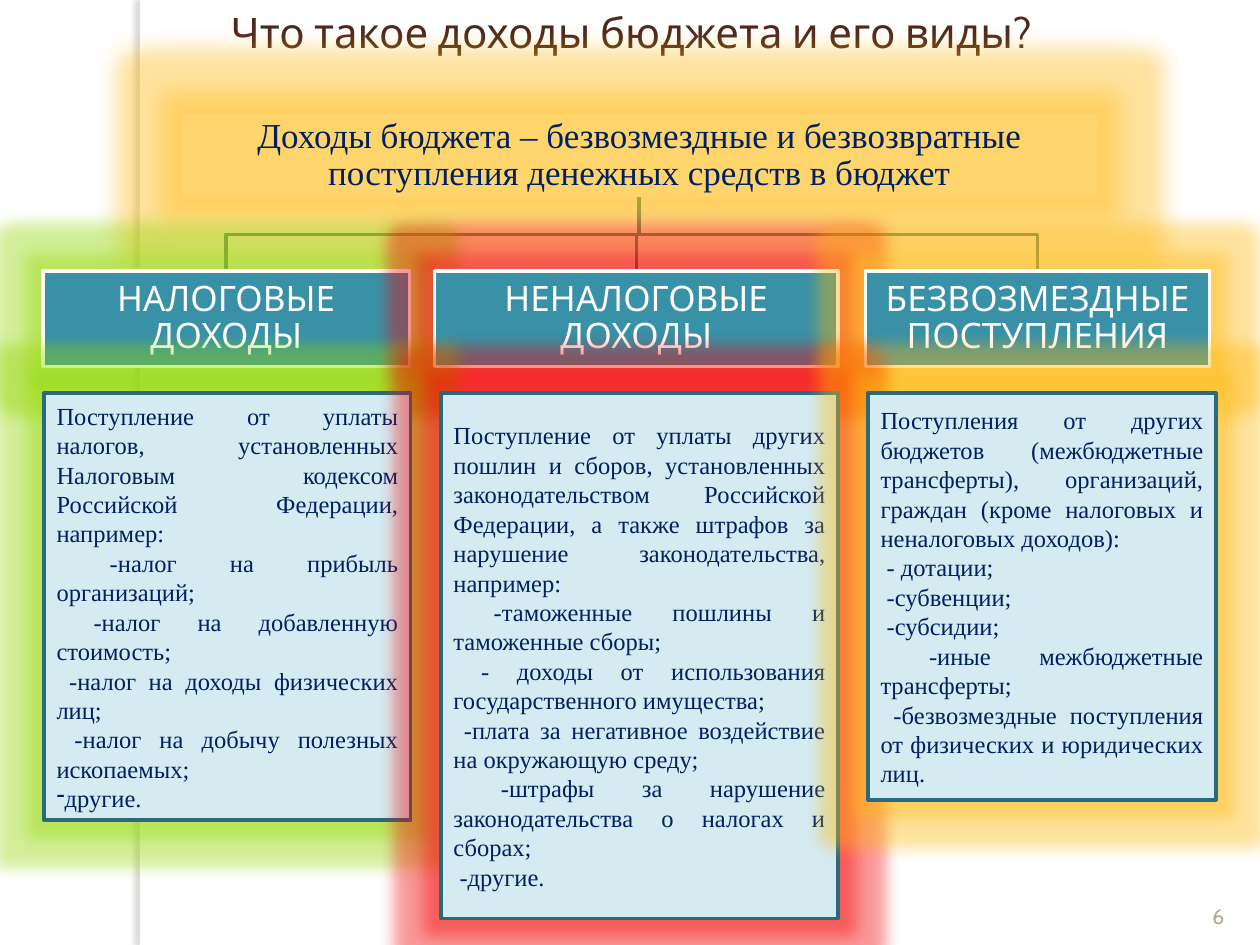
import pptx
import pptx.util
import pptx.dml.color
import pptx.enum.shapes
import pptx.enum.text
import pptx.oxml
import pptx.oxml.ns

Inches = pptx.util.Inches
Pt = pptx.util.Pt
RGB = pptx.dml.color.RGBColor
ALIGN = pptx.enum.text.PP_ALIGN
ANCHOR = pptx.enum.text.MSO_ANCHOR

WHITE = RGB(0xFF, 0xFF, 0xFF)
NAVY = RGB(0x00, 0x20, 0x60)
BROWN = RGB(0x4F, 0x27, 0x1C)
SAND = RGB(0xB6, 0xA9, 0x8A)
STONE = RGB(0x73, 0x6F, 0x63)
TEAL = RGB(0x38, 0x91, 0xA7)
TEAL_LINE = RGB(0x2D, 0x74, 0x86)
TEAL_DARK = RGB(0x29, 0x6B, 0x7C)
PALE = RGB(0xD4, 0xEB, 0xF1)
GOLD = RGB(0xFE, 0xD4, 0x6C)
AMBER = RGB(0xFE, 0xB8, 0x0A)
GREEN = RGB(0x92, 0xD8, 0x00)
RED = RGB(0xF4, 0x00, 0x00)

HEADER_TOP = 2.15
BODY_TOP = 3.12
TRUNK = 5.07

COLUMNS = [
    ("НАЛОГОВЫЕ ДОХОДЫ", GREEN, (0.34, 2.91), (0.35, 2.91, 3.39), [
        "Поступление от уплаты налогов, установленных Налоговым кодексом Российской Федерации, например:",
        " -налог на прибыль организаций;",
        " -налог на добавленную стоимость;",
        " -налог на доходы физических лиц;",
        " -налог на добычу полезных ископаемых;",
        "другие."]),
    ("НЕНАЛОГОВЫЕ ДОХОДЫ", RED, (3.45, 3.2), (3.5, 3.15, 4.17), [
        "Поступление от уплаты других пошлин и сборов, установленных законодательством "
        "Российской Федерации, а также штрафов за нарушение законодательства, например:",
        " -таможенные пошлины и таможенные сборы;",
        " - доходы от использования государственного имущества;",
        " -плата за негативное воздействие на окружающую среду;",
        " -штрафы за нарушение законодательства о налогах и сборах;",
        " -другие."]),
    ("БЕЗВОЗМЕЗДНЫЕ ПОСТУПЛЕНИЯ", AMBER, (6.87, 2.73), (6.89, 2.76, 3.23), [
        "Поступления от других бюджетов (межбюджетные трансферты), организаций, "
        "граждан (кроме налоговых и неналоговых доходов):",
        " - дотации;",
        " -субвенции;",
        " -субсидии;",
        " -иные межбюджетные трансферты;",
        " -безвозмездные поступления от физических и юридических лиц."]),
]


class Deck:
    """Holds the style and the current slide and draws each kind of element."""

    def __init__(self):
        self.prs = pptx.Presentation()
        self.prs.slide_width, self.prs.slide_height = Inches(10), Inches(7.5)
        self.s = self.prs.slides.add_slide(self.prs.slide_layouts[5])
        self.heading_font, self.body_font = "Cabin", "Times New Roman"

    def effect(self, sp, tag, color, alpha, **attrs):
        sp.shadow.inherit = False
        effects = sp._element.spPr.find(pptx.oxml.ns.qn("a:effectLst"))
        values = " ".join(f'{k}="{int(v)}"' for k, v in attrs.items())
        effects.append(pptx.oxml.parse_xml(
            f'<a:{tag} {pptx.oxml.ns.nsdecls("a")} {values}><a:srgbClr val="{color}">'
            f'<a:alpha val="{alpha * 1000}"/></a:srgbClr></a:{tag}>'))

    def text(self, sp, lines, size, font, color, align=ALIGN.CENTER,
             anchor=ANCHOR.MIDDLE, inset=None, spacing=None):
        tf = sp.text_frame
        tf.word_wrap, tf.vertical_anchor = True, anchor
        if inset is not None:
            tf.margin_left = tf.margin_right = tf.margin_top = tf.margin_bottom = Inches(inset)
        tf.text = "\n".join(lines)
        for p in tf.paragraphs:
            p.alignment, p.line_spacing = align, spacing
            for r in p.runs:
                r.font.size, r.font.name, r.font.color.rgb = Pt(size), font, color
        return tf

    def title(self, text, x, y, w, h):
        sp = self.s.shapes.title
        sp.left, sp.top, sp.width, sp.height = map(Inches, (x, y, w, h))
        self.text(sp, [text], 24, self.heading_font, BROWN, anchor=ANCHOR.TOP)

    def box(self, x, y, w, h, fill, line=None):
        sp = self.s.shapes.add_shape(
            pptx.enum.shapes.MSO_SHAPE.RECTANGLE, *map(Inches, (x, y, w, h)))
        sp.shadow.inherit = False
        sp.fill.solid()
        sp.fill.fore_color.rgb = fill
        if line is None:
            sp.line.fill.background()
        else:
            sp.line.color.rgb, sp.line.width = line, Pt(2)
        return sp

    def glow_box(self, x, y, w, h, fill, line, glow, radius=0.25):
        sp = self.box(x, y, w, h, fill, line)
        self.effect(sp, "glow", glow, 40, rad=Inches(radius))
        return sp

    def branch(self, x, top, middle, bottom):
        points = [(TRUNK, top), (TRUNK, middle), (x, middle), (x, bottom)]
        points = [(Inches(a), Inches(b)) for a, b in points]
        builder = self.s.shapes.build_freeform(*points[0])
        builder.add_line_segments(points[1:], close=False)
        sp = builder.convert_to_shape()
        sp.shadow.inherit = False
        sp.fill.background()
        sp.line.color.rgb, sp.line.width = TEAL_LINE, Pt(2)

    def label(self, text, x, y, w, h):
        sp = self.s.shapes.add_textbox(*map(Inches, (x, y, w, h)))
        self.text(sp, [text], 12, self.heading_font, SAND, anchor=ANCHOR.BOTTOM)

    def dash(self, p):
        pPr = p._p.get_or_add_pPr()
        pPr.set("marL", "0")
        pPr.set("indent", "0")
        pPr.append(pptx.oxml.parse_xml(
            f'<a:buChar {pptx.oxml.ns.nsdecls("a")} char="-"/>'))


def main():
    d = Deck()
    band = d.box(1.11, 0, 0.08, 7.5, WHITE)
    d.effect(band, "outerShdw", STONE, 25, blurRad=Pt(3), dist=Pt(3), dir=180 * 60000)
    d.title("Что такое доходы бюджета и его виды?", 0.51, 0, 9, 0.67)

    for _, _, (x, w), _, _ in reversed(COLUMNS):
        d.branch(x + w / 2, 1.54, 1.86, HEADER_TOP)
    root = d.glow_box(1.46, 0.92, 7.23, 0.63, GOLD, GOLD, AMBER, 0.35)
    d.text(root, ["Доходы бюджета – безвозмездные и безвозвратные поступления денежных средств в бюджет"],
           20, d.body_font, NAVY, inset=0.01, spacing=0.9)

    for name, glow, (x, w), _, _ in COLUMNS:
        sp = d.glow_box(x, HEADER_TOP, w, 0.76, TEAL, WHITE, glow)
        d.text(sp, [name], 20, d.heading_font, WHITE, inset=0.01, spacing=0.9)

    bodies = []
    for _, glow, _, (x, w, h), lines in COLUMNS:
        sp = d.glow_box(x, BODY_TOP, w, h, PALE, TEAL_DARK, glow)
        bodies.append(d.text(sp, lines, 14, d.body_font, NAVY, align=ALIGN.JUSTIFY))
    d.dash(bodies[0].paragraphs[-1])

    d.label("6", 9.42, 6.9, 0.5, 0.52)
    d.prs.save("out.pptx")


if __name__ == "__main__":
    main()
